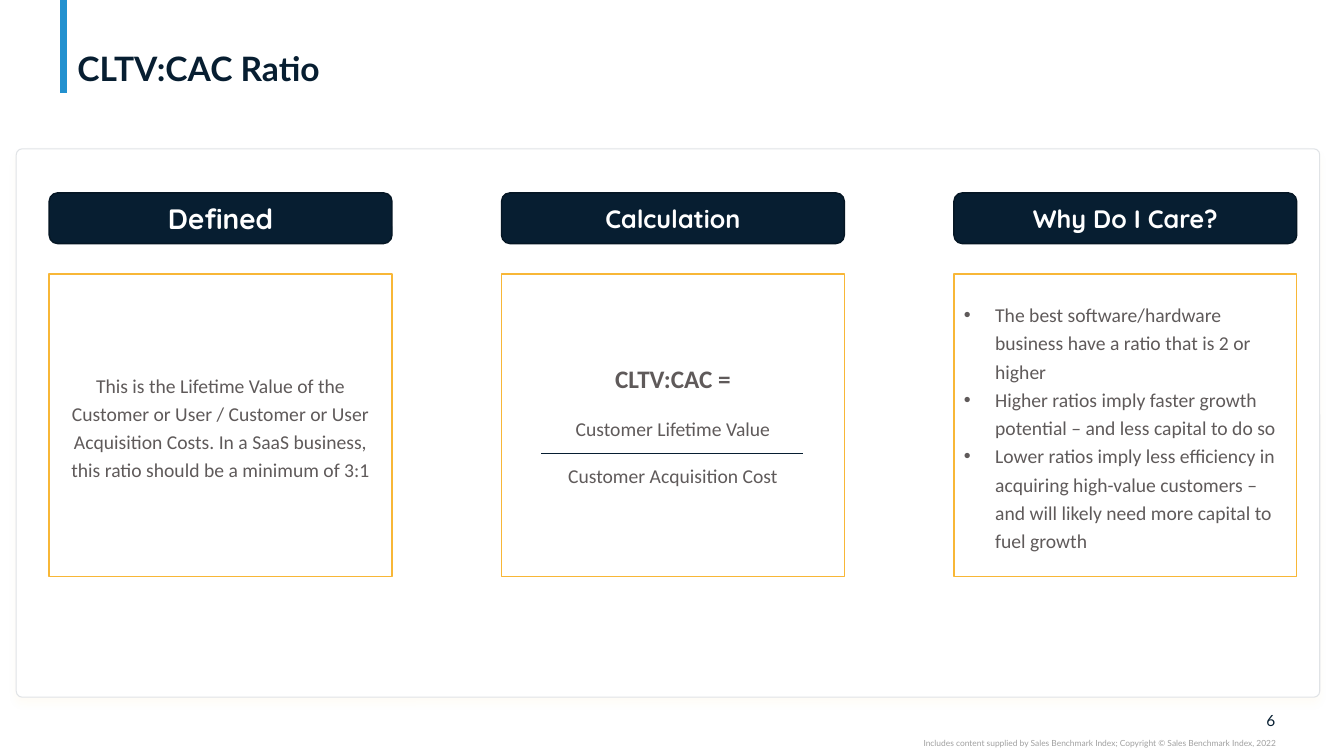
from dataclasses import dataclass

from lxml import etree
from pptx import Presentation
from pptx.dml.color import RGBColor
from pptx.enum.shapes import MSO_CONNECTOR, MSO_SHAPE
from pptx.enum.text import MSO_ANCHOR, PP_ALIGN
from pptx.oxml import parse_xml
from pptx.oxml.ns import nsdecls, qn
from pptx.util import Cm, Pt

NAVY = RGBColor(0x07, 0x1E, 0x31)
EDGE = RGBColor(0x05, 0x16, 0x24)
BLUE = RGBColor(0x23, 0x91, 0xCF)
GOLD = RGBColor(0xF8, 0xB7, 0x37)
GREY = RGBColor(0x5F, 0x5A, 0x5A)
PALE = RGBColor(0xA0, 0xA0, 0xA0)
MIST = RGBColor(0xE0, 0xE3, 0xE6)
WHITE = RGBColor(0xFF, 0xFF, 0xFF)

RECT = MSO_SHAPE.RECTANGLE
ROUND = MSO_SHAPE.ROUNDED_RECTANGLE
STRAIGHT = MSO_CONNECTOR.STRAIGHT
LEFT, CENTER, RIGHT = PP_ALIGN.LEFT, PP_ALIGN.CENTER, PP_ALIGN.RIGHT
TOP, MIDDLE, BOTTOM = MSO_ANCHOR.TOP, MSO_ANCHOR.MIDDLE, MSO_ANCHOR.BOTTOM


@dataclass
class Line:
    text: str
    size: float = 14
    font: str = "Calibri"
    color: RGBColor = GREY
    bold: bool = False
    align: PP_ALIGN = CENTER
    space: float = 1.0
    gap: float = 0
    bullet: bool = False


@dataclass
class Column:
    head: str
    size: float
    body: list[Line]


COLUMNS = [
    Column("Defined", 20, [
        Line("This is the Lifetime Value of the Customer or User / Customer or "
             "User Acquisition Costs. In a SaaS business, this ratio should be "
             "a minimum of 3:1", space=1.2),
    ]),
    Column("Calculation", 18, [
        Line("CLTV:CAC =", 18, bold=True),
        Line("Customer Lifetime Value", gap=17),
        Line("Customer Acquisition Cost", gap=17),
    ]),
    Column("Why Do I Care?", 18, [
        Line(text, align=LEFT, space=1.2, bullet=True) for text in (
            "The best software/hardware business have a ratio that is 2 or higher",
            "Higher ratios imply faster growth potential – and less capital to do so",
            "Lower ratios imply less efficiency in acquiring high-value customers – "
            "and will likely need more capital to fuel growth",
        )
    ]),
]


def write(shape, lines: list[Line], anchor: MSO_ANCHOR = MIDDLE) -> None:
    frame = shape.text_frame
    frame.word_wrap = True
    frame.vertical_anchor = anchor
    for i, line in enumerate(lines):
        para = frame.add_paragraph() if i else frame.paragraphs[0]
        para.text = line.text
        para.alignment = line.align
        para.line_spacing = line.space
        if line.gap:
            para.space_before = Pt(line.gap)
        if line.bullet:
            props = para._p.get_or_add_pPr()
            props.set("marL", str(Cm(0.79)))
            props.set("indent", str(Cm(-0.79)))
            etree.SubElement(props, qn("a:buFont")).set("typeface", "Arial")
            etree.SubElement(props, qn("a:buChar")).set("char", "•")
        font = para.font
        font.name, font.size, font.bold = line.font, Pt(line.size), line.bold
        font.color.rgb = line.color


def add_box(slide, kind: MSO_SHAPE, x: float, y: float, w: float, h: float,
            fill: RGBColor, edge: RGBColor, width: float = 1):
    box = slide.shapes.add_shape(kind, Cm(x), Cm(y), Cm(w), Cm(h))
    box.shadow.inherit = False
    box.fill.solid()
    box.fill.fore_color.rgb = fill
    box.line.color.rgb = edge
    box.line.width = Pt(width)
    return box


def add_label(slide, x: float, y: float, w: float, h: float, line: Line,
              anchor: MSO_ANCHOR, pad: float = 0) -> None:
    label = slide.shapes.add_textbox(Cm(x), Cm(y), Cm(w), Cm(h))
    frame = label.text_frame
    frame.margin_left = frame.margin_right = Cm(pad)
    frame.margin_top = frame.margin_bottom = 0
    write(label, [line], anchor)


def add_rule(slide, x1: float, y1: float, x2: float, y2: float,
             color: RGBColor, width: float) -> None:
    rule = slide.shapes.add_connector(STRAIGHT, Cm(x1), Cm(y1), Cm(x2), Cm(y2))
    rule.line.color.rgb = color
    rule.line.width = Pt(width)
    etree.SubElement(rule._element.spPr, qn("a:effectLst"))


def add_glow(shape) -> None:
    effects = shape._element.spPr.find(qn("a:effectLst"))
    effects.append(parse_xml(
        f'<a:outerShdw {nsdecls("a")} blurRad="{Pt(6)}" dist="{Pt(4)}" '
        f'dir="5400000" algn="t" rotWithShape="0"><a:srgbClr val="{GOLD}">'
        '<a:alpha val="4000"/></a:srgbClr></a:outerShdw>'))


def main() -> None:
    deck = Presentation()
    deck.slide_width, deck.slide_height = Cm(33.87), Cm(19.05)
    slide = deck.slides.add_slide(deck.slide_layouts[6])

    # Title and footer
    add_rule(slide, 1.6, 0, 1.6, 2.34, BLUE, 5)
    add_label(slide, 1.7, 0.1, 30.45, 2.13,
              Line("CLTV:CAC Ratio", 24, "Lato", NAVY, True, LEFT, 0.9), BOTTOM, 0.25)
    add_label(slide, 31.3, 17.91, 0.84, 0.48,
              Line("6", 11, "Lato", NAVY, align=RIGHT), MIDDLE)
    add_label(slide, 19.05, 18.6, 13.1, 0.25,
              Line("Includes content supplied by Sales Benchmark Index; "
                   "Copyright © Sales Benchmark Index, 2022",
                   6, "Lato", PALE, align=RIGHT), TOP)

    # Card behind the columns
    card = add_box(slide, ROUND, 0.41, 3.75, 32.85, 13.82, WHITE, MIST, 0.75)
    card.adjustments[0] = 0.011
    add_glow(card)

    # Columns
    for i, col in enumerate(COLUMNS):
        x = 1.24 + 11.4 * i
        head = add_box(slide, ROUND, x, 4.86, 8.64, 1.28, NAVY, EDGE)
        write(head, [Line(col.head, col.size, "Quicksand", WHITE, True)])
        body = add_box(slide, RECT, x, 6.91, 8.64, 7.62, WHITE, GOLD)
        write(body, col.body)

    # Fraction bar
    add_rule(slide, 13.64, 11.43, 20.24, 11.43, NAVY, 0.25)

    deck.save("out.pptx")


if __name__ == "__main__":
    main()
